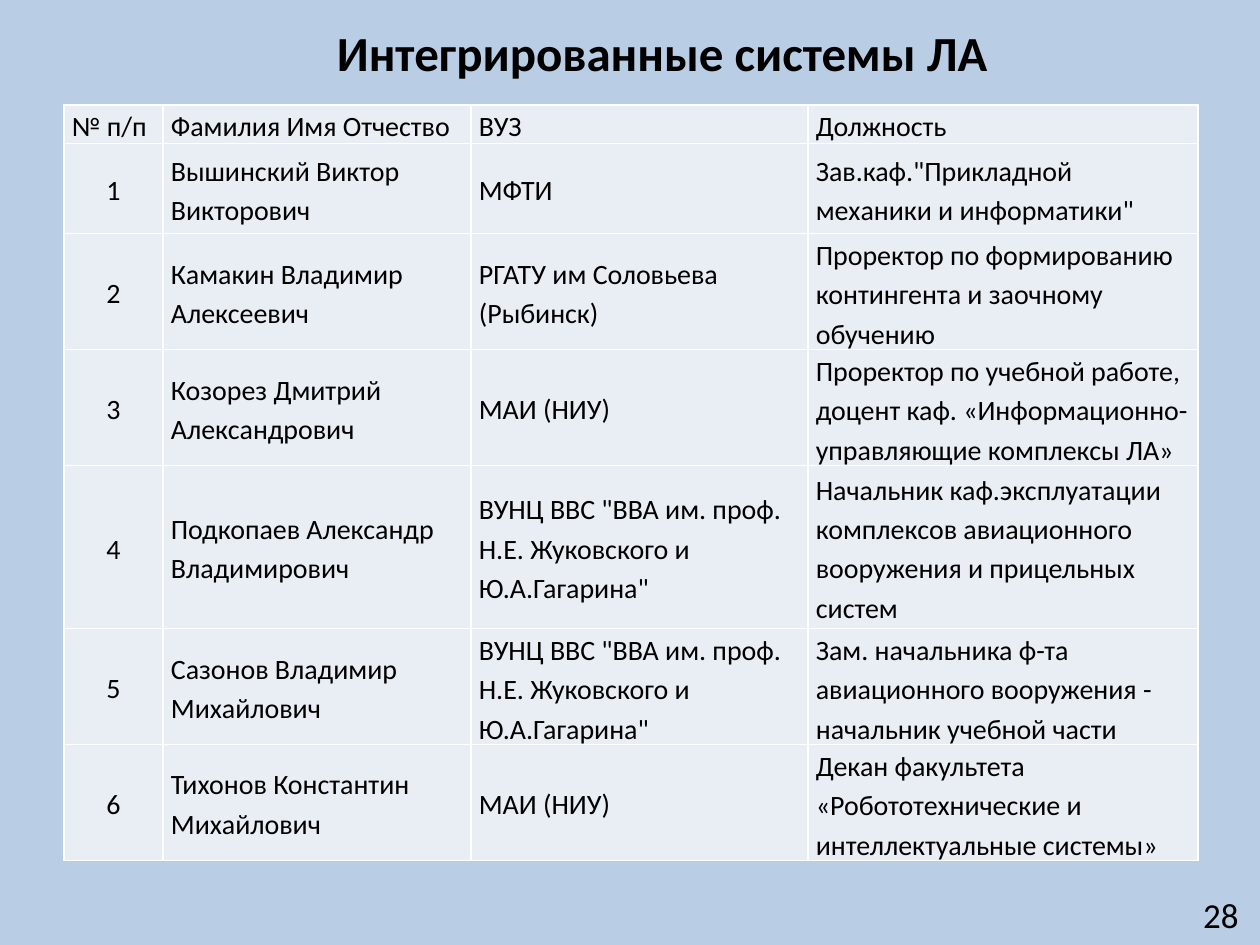
from dataclasses import dataclass

from lxml.etree import SubElement
from pptx import Presentation
from pptx.dml.color import RGBColor
from pptx.enum.text import MSO_ANCHOR, MSO_AUTO_SIZE, PP_ALIGN
from pptx.oxml.ns import qn
from pptx.util import Emu, Pt

PIXELS_PER_INCH = 126


@dataclass(frozen=True)
class Theme:
    font: str = "Calibri"
    background: RGBColor = RGBColor(0xB9, 0xCD, 0xE5)
    cell: RGBColor = RGBColor(0xE9, 0xED, 0xF4)
    border: RGBColor = RGBColor(0xFF, 0xFF, 0xFF)
    text: RGBColor = RGBColor(0, 0, 0)
    title_size: int = 28
    number_size: int = 20
    table_size: int = 16
    border_width: int = 1
    line_spacing: float = 1.15
    space_after: int = 10


THEME = Theme()

COLUMN_WIDTHS = [99, 308, 337, 390]
ROW_HEIGHTS = [38, 90, 116, 116, 163, 116, 116]
HEADINGS = ["№ п/п", "Фамилия Имя Отчество", "ВУЗ", "Должность"]
ACADEMY = 'ВУНЦ ВВС "ВВА им. проф. Н.Е. Жуковского и Ю.А.Гагарина"'
MEMBERS = [
    ("Вышинский Виктор Викторович", "МФТИ",
     'Зав.каф."Прикладной механики и информатики"'),
    ("Камакин Владимир Алексеевич", "РГАТУ им Соловьева (Рыбинск)",
     "Проректор по формированию контингента и заочному обучению"),
    ("Козорез Дмитрий Александрович", "МАИ (НИУ)",
     "Проректор по учебной работе, доцент каф. «Информационно-управляющие комплексы ЛА»"),
    ("Подкопаев Александр Владимирович", ACADEMY,
     "Начальник каф.эксплуатации комплексов авиационного вооружения и прицельных систем"),
    ("Сазонов Владимир Михайлович", ACADEMY,
     "Зам. начальника ф-та авиационного вооружения - начальник учебной части"),
    ("Тихонов Константин Михайлович", "МАИ (НИУ)",
     "Декан факультета «Робототехнические и интеллектуальные системы»"),
]


def px(length):
    return Emu(round(length * 914400 / PIXELS_PER_INCH))


def write(text_frame, text, size, alignment, bold=False):
    text_frame.text = text
    paragraph = text_frame.paragraphs[0]
    paragraph.alignment = alignment
    for span in paragraph.runs:
        span.font.name = THEME.font
        span.font.size = Pt(size)
        span.font.bold = bold
        span.font.color.rgb = THEME.text
    return paragraph


def add_title(page, text):
    title = page.shapes.title
    title.left, title.top, title.width, title.height = map(px, (228, 16, 868, 72))
    frame = title.text_frame
    frame.word_wrap = True
    frame.vertical_anchor = MSO_ANCHOR.TOP
    frame.auto_size = MSO_AUTO_SIZE.SHAPE_TO_FIT_TEXT
    write(frame, text, THEME.title_size, PP_ALIGN.CENTER, bold=True)


def add_page_number(page, text):
    box = page.shapes.add_textbox(*map(px, (958, 890, 293, 50)))
    box.text_frame.word_wrap = True
    box.text_frame.vertical_anchor = MSO_ANCHOR.MIDDLE
    write(box.text_frame, text, THEME.number_size, PP_ALIGN.RIGHT)


def add_borders(cell):
    properties = cell._tc.get_or_add_tcPr()
    for position, side in enumerate(("lnL", "lnR", "lnT", "lnB")):
        line = SubElement(properties, qn(f"a:{side}"), w=str(Pt(THEME.border_width)))
        fill = SubElement(line, qn("a:solidFill"))
        SubElement(fill, qn("a:srgbClr"), val=str(THEME.border))
        properties.insert(position, line)


def format_cell(cell, text, alignment, space_after):
    cell.margin_left = cell.margin_right = px(8)
    cell.margin_top = cell.margin_bottom = 0
    cell.vertical_anchor = MSO_ANCHOR.MIDDLE
    cell.fill.solid()
    cell.fill.fore_color.rgb = THEME.cell
    add_borders(cell)
    paragraph = write(cell.text_frame, text, THEME.table_size, alignment)
    paragraph.line_spacing = THEME.line_spacing
    paragraph.space_after = Pt(space_after)


def add_member_table(page):
    rows = [HEADINGS] + [(str(number), *member) for number, member in enumerate(MEMBERS, 1)]
    table = page.shapes.add_table(
        len(rows), len(HEADINGS), px(64), px(105),
        px(sum(COLUMN_WIDTHS)), px(sum(ROW_HEIGHTS))).table
    table.first_row = table.horz_banding = False
    for column, width in zip(table.columns, COLUMN_WIDTHS):
        column.width = px(width)
    for row, height in zip(table.rows, ROW_HEIGHTS):
        row.height = px(height)
    for row_index, values in enumerate(rows):
        for column_index, text in enumerate(values):
            is_body = row_index > 0
            is_number = is_body and column_index == 0
            format_cell(
                table.cell(row_index, column_index), text,
                PP_ALIGN.CENTER if is_number else PP_ALIGN.LEFT,
                THEME.space_after if is_body and not is_number else 0)


def main():
    deck = Presentation()
    deck.slide_width, deck.slide_height = px(1260), px(945)
    page = deck.slides.add_slide(deck.slide_layouts.get_by_name("Title Only"))
    page.background.fill.solid()
    page.background.fill.fore_color.rgb = THEME.background
    add_title(page, "Интегрированные системы ЛА")
    add_page_number(page, "28")
    add_member_table(page)
    deck.save("out.pptx")


if __name__ == "__main__":
    main()
